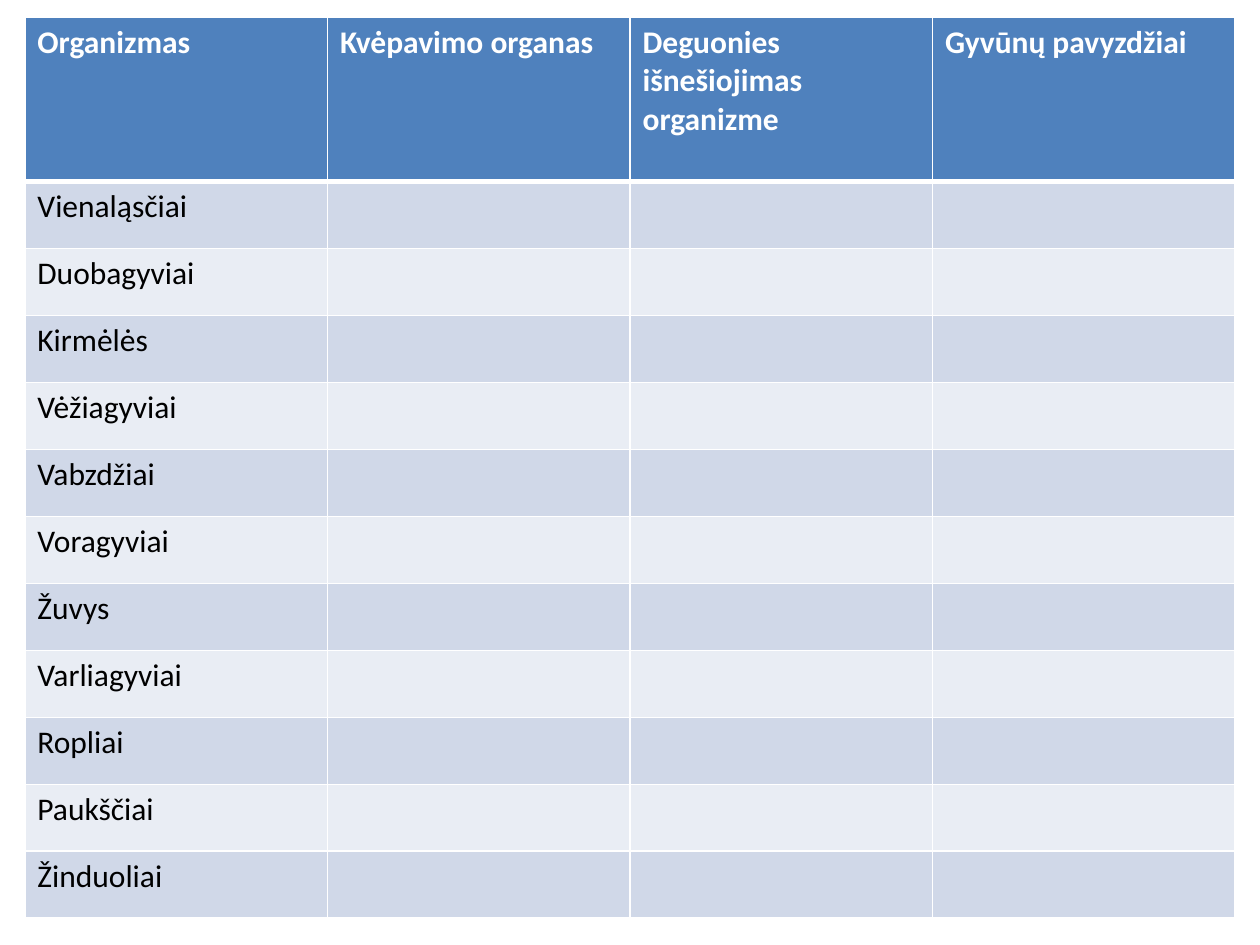
from lxml.etree import SubElement
from pptx import Presentation
from pptx.dml.color import RGBColor
from pptx.oxml.ns import qn
from pptx.util import Cm, Pt

COLORS = {
    "header": "4F81BD",
    "odd_row": "D0D8E8",
    "even_row": "E9EDF4",
    "border": "FFFFFF",
    "header_text": "FFFFFF",
    "body_text": "000000",
}

HEADINGS = [
    "Organizmas",
    "Kvėpavimo organas",
    "Deguonies išnešiojimas organizme",
    "Gyvūnų pavyzdžiai",
]
ORGANISMS = [
    "Vienaląsčiai", "Duobagyviai", "Kirmėlės", "Vėžiagyviai",
    "Vabzdžiai", "Voragyviai", "Žuvys", "Varliagyviai",
    "Ropliai", "Paukščiai", "Žinduoliai",
]
HEADER_HEIGHT = 3.32


def write_text(frame, text, size=18, color="body_text", bold=False):
    run = frame.paragraphs[0].add_run()
    run.text = text
    run.font.name = "Calibri"
    run.font.size = Pt(size)
    run.font.bold = bold
    run.font.color.rgb = RGBColor.from_string(COLORS[color])


def set_borders(cell, **widths):
    """Draw the four cell borders, widths in points."""
    properties = cell._tc.get_or_add_tcPr()
    for side in ("L", "R", "T", "B"):
        line = SubElement(properties, qn(f"a:ln{side}"), w=str(Pt(widths.get(side, 1))))
        fill = SubElement(line, qn("a:solidFill"))
        SubElement(fill, qn("a:srgbClr"), val=COLORS["border"])


def style_cell(cell, fill, **border_widths):
    # Borders come before the fill in the cell properties
    set_borders(cell, **border_widths)
    cell.fill.solid()
    cell.fill.fore_color.rgb = RGBColor.from_string(COLORS[fill])


def add_organism_table(slide, left, top, width, height):
    """Place the table in the given box, in centimetres."""
    organisms = slide.shapes.add_table(
        len(ORGANISMS) + 1, len(HEADINGS), Cm(left), Cm(top), Cm(width), Cm(height)
    ).table
    for column in organisms.columns:
        column.width = Cm(width / len(HEADINGS))

    # Header row
    organisms.rows[0].height = Cm(HEADER_HEIGHT)
    for index, heading in enumerate(HEADINGS):
        cell = organisms.cell(0, index)
        style_cell(cell, "header", B=3)
        write_text(cell.text_frame, heading, color="header_text", bold=True)

    # Banded rows, one per organism, with blanks to fill in
    row_height = (height - HEADER_HEIGHT) / len(ORGANISMS)
    for number, organism in enumerate(ORGANISMS, start=1):
        organisms.rows[number].height = Cm(row_height)
        for index in range(len(HEADINGS)):
            style_cell(
                organisms.cell(number, index),
                "odd_row" if number % 2 else "even_row",
                T=3 if number == 1 else 1,
            )
        write_text(organisms.cell(number, 0).text_frame, organism)


def main():
    presentation = Presentation()
    presentation.slide_width = Cm(25.4)
    presentation.slide_height = Cm(19.05)
    slide = presentation.slides.add_slide(presentation.slide_layouts[6])
    add_organism_table(slide, left=0.5, top=0.34, width=24.4, height=18.17)
    presentation.save("out.pptx")


if __name__ == "__main__":
    main()
